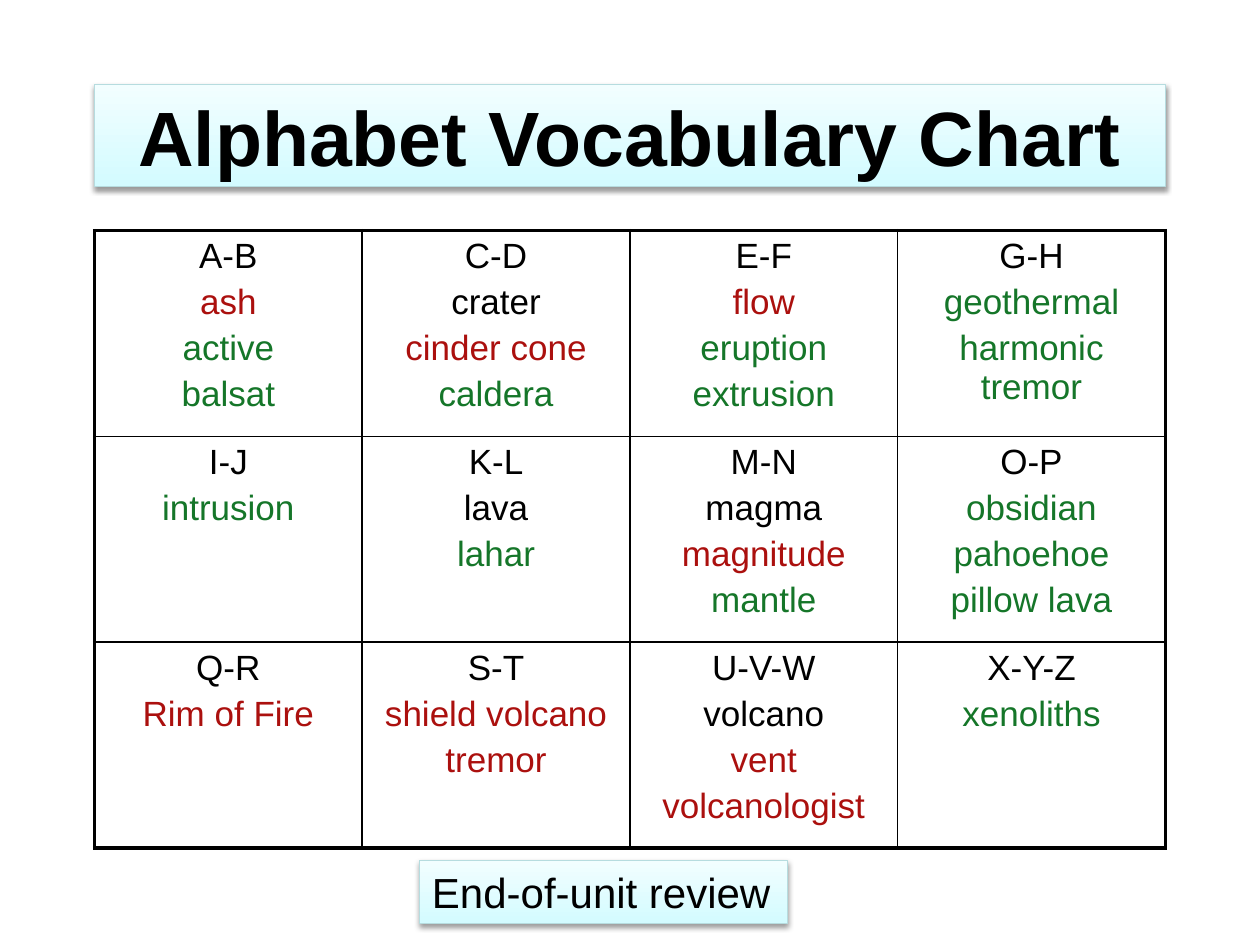
from lxml import etree
from pptx import Presentation
from pptx import util as u
from pptx.dml.color import RGBColor
from pptx.enum import shapes, text
from pptx.oxml import parse_xml
from pptx.oxml.ns import nsdecls, qn

BLACK, RED, GREEN = "000000", "AB100E", "157629"


def write(para, words, size, color=BLACK, bold=False, align=text.PP_ALIGN.CENTER, before=0):
    para.alignment = align
    para.space_before = u.Pt(before)
    span = para.add_run()
    span.text = words
    span.font.name = "Arial"
    span.font.size = u.Pt(size)
    span.font.bold = bold
    span.font.color.rgb = RGBColor.from_string(color)


def style_panel(box):
    """Give a box the pale gradient, thin outline and soft shadow."""
    box.fill.gradient()
    box.fill.gradient_angle = 90
    for stop, color in zip(box.fill.gradient_stops, ("D3FBFF", "F2FEFF")):
        stop.color.rgb = RGBColor.from_string(color)
    box.line.color.rgb = RGBColor.from_string("B6DCDF")
    box.line.width = u.Pt(0.75)
    box.shadow.inherit = False
    effects = box._element.spPr.find(qn("a:effectLst"))
    effects.append(parse_xml(
        f'<a:outerShdw {nsdecls("a")} blurRad="{u.Pt(3.1)}" dist="{u.Pt(1.6)}" '
        'dir="5400000" rotWithShape="0"><a:srgbClr val="000000">'
        '<a:alpha val="38000"/></a:srgbClr></a:outerShdw>'))


deck = Presentation()
deck.slide_width, deck.slide_height = u.Inches(10), u.Inches(7.5)
page = deck.slides.add_slide(deck.slide_layouts[5])

# Title
title = page.shapes.title
title.left, title.top = u.Inches(0.75), u.Inches(0.67)
title.width, title.height = u.Inches(8.5), u.Inches(0.81)
title.text_frame.vertical_anchor = text.MSO_ANCHOR.MIDDLE
write(title.text_frame.paragraphs[0], "Alphabet Vocabulary Chart", 44, bold=True)
style_panel(title)

# Vocabulary table: each cell holds its letters, then words with their colours
vocabulary = [
    [
        [("A-B", BLACK), ("ash", RED), ("active", GREEN), ("balsat", GREEN)],
        [("C-D", BLACK), ("crater", BLACK), ("cinder cone", RED), ("caldera", GREEN)],
        [("E-F", BLACK), ("flow", RED), ("eruption", GREEN), ("extrusion", GREEN)],
        [("G-H", BLACK), ("geothermal", GREEN), ("harmonic tremor", GREEN)],
    ],
    [
        [("I-J", BLACK), ("intrusion", GREEN)],
        [("K-L", BLACK), ("lava", BLACK), ("lahar", GREEN)],
        [("M-N", BLACK), ("magma", BLACK), ("magnitude", RED), ("mantle", GREEN)],
        [("O-P", BLACK), ("obsidian", GREEN), ("pahoehoe", GREEN), ("pillow lava", GREEN)],
    ],
    [
        [("Q-R", BLACK), ("Rim of Fire", RED)],
        [("S-T", BLACK), ("shield volcano", RED), ("tremor", RED)],
        [("U-V-W", BLACK), ("volcano", BLACK), ("vent", RED), ("volcanologist", RED)],
        [("X-Y-Z", BLACK), ("xenoliths", GREEN)],
    ],
]
row_count, column_count = len(vocabulary), len(vocabulary[0])
table = page.shapes.add_table(row_count, column_count, u.Inches(0.75), u.Inches(1.83),
                              u.Inches(8.5), u.Inches(4.9)).table
table.first_row = table.horz_banding = False

for r, row in enumerate(vocabulary):
    for c, entries in enumerate(row):
        cell = table.cell(r, c)
        for i, (word, color) in enumerate(entries):
            frame = cell.text_frame
            para = frame.add_paragraph() if i else frame.paragraphs[0]
            write(para, word, 20, color, before=4)
        cell.fill.background()
        outer_edges = {"lnL": c == 0, "lnR": c == column_count - 1,
                       "lnT": r == 0, "lnB": r == row_count - 1}
        for position, (edge, is_outer) in enumerate(outer_edges.items()):
            border = etree.Element(qn(f"a:{edge}"), w=str(u.Pt(2.25 if is_outer else 1)))
            fill = etree.SubElement(border, qn("a:solidFill"))
            etree.SubElement(fill, qn("a:srgbClr"), val=BLACK)
            cell._tc.get_or_add_tcPr().insert(position, border)

# Review label
label = page.shapes.add_shape(shapes.MSO_SHAPE.RECTANGLE, u.Inches(3.33), u.Inches(6.83),
                              u.Inches(2.92), u.Inches(0.5))
style_panel(label)
label.text_frame.word_wrap = False
label.text_frame.auto_size = text.MSO_AUTO_SIZE.SHAPE_TO_FIT_TEXT
label.text_frame.vertical_anchor = text.MSO_ANCHOR.TOP
write(label.text_frame.paragraphs[0], "End-of-unit review", 24, align=text.PP_ALIGN.LEFT)

deck.save("out.pptx")
